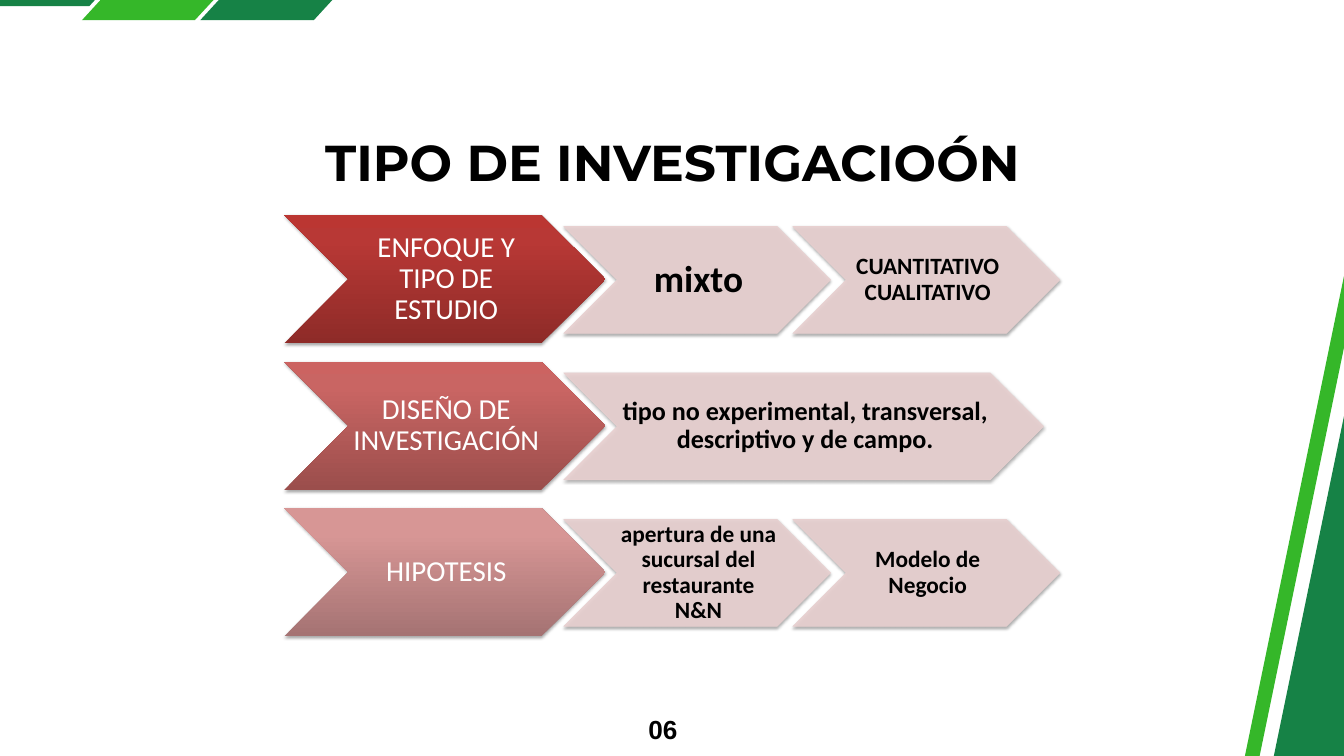
from lxml import etree
from pptx import Presentation
from pptx import util as u
from pptx.dml.color import RGBColor
from pptx.enum import shapes, text
from pptx.oxml import parse_xml
from pptx.oxml.ns import nsdecls, qn

DARK_GREEN = RGBColor(0x16, 0x82, 0x46)
LIGHT_GREEN = RGBColor(0x35, 0xB7, 0x29)
PALE_PINK = RGBColor(0xE8, 0xD0, 0xD0)
BLACK = RGBColor(0, 0, 0)
WHITE = RGBColor(0xFF, 0xFF, 0xFF)

deck = Presentation()
deck.slide_width, deck.slide_height = u.Inches(20), u.Inches(11.25)
slide = deck.slides.add_slide(deck.slide_layouts[6])


def write(shape, wording, size, font, color, bold, align, inset=(0, 0, 0, 0)):
    """Put one formatted paragraph in a shape; inset is left, top, right, bottom."""
    frame = shape.text_frame
    frame.word_wrap = True
    (frame.margin_left, frame.margin_top,
     frame.margin_right, frame.margin_bottom) = map(u.Inches, inset)
    frame.text = wording
    paragraph = frame.paragraphs[0]
    paragraph.alignment = align
    run = paragraph.runs[0].font
    run.size, run.name, run.bold = u.Pt(size), font, bold
    run.color.rgb = color
    return paragraph


def add_chevron(left, top, width, height):
    """Add a chevron with a soft shadow below it."""
    chevron = slide.shapes.add_shape(
        shapes.MSO_SHAPE.CHEVRON, *map(u.Inches, (left, top, width, height)))
    chevron.line.fill.background()
    chevron.shadow.inherit = False
    chevron.text_frame.vertical_anchor = text.MSO_ANCHOR.MIDDLE
    effects = chevron._element.spPr.find(qn("a:effectLst"))
    effects.append(parse_xml(
        f'<a:outerShdw {nsdecls("a")} blurRad="40000" dist="23000" dir="5400000" '
        'rotWithShape="0"><a:srgbClr val="000000"><a:alpha val="35000"/>'
        '</a:srgbClr></a:outerShdw>'))
    return chevron


# Green bands in the top left corner and along the right edge
bands = [
    (DARK_GREEN, [(-1.79, -0.83), (2.17, -0.83), (1.33, 0.09), (-2.63, 0.09)]),
    (LIGHT_GREEN, [(2.44, -1.03), (4.13, -1.03), (2.9, 0.3), (1.22, 0.3)]),
    (DARK_GREEN, [(4.2, -1.03), (5.89, -1.03), (4.67, 0.3), (2.98, 0.3)]),
    (DARK_GREEN, [(18.13, 15.25), (21.45, -0.83), (26.01, 0.12), (22.69, 16.19)]),
    (LIGHT_GREEN, [(17.7, 15.25), (21.02, -0.83), (21.23, -0.78), (17.91, 15.29)]),
]
for color, corners in bands:
    points = [(u.Inches(x), u.Inches(y)) for x, y in corners]
    outline = slide.shapes.build_freeform(*points[0])
    outline.add_line_segments(points[1:], close=True)
    band = outline.convert_to_shape()
    band.fill.solid()
    band.fill.fore_color.rgb = color
    band.line.fill.background()
    band.shadow.inherit = False

title = slide.shapes.add_textbox(*map(u.Inches, (2.42, 1.95, 15.17, 0.91)))
write(title, "TIPO DE INVESTIGACIOÓN", 54, "Montserrat", BLACK, True, text.PP_ALIGN.CENTER)

page_number = slide.shapes.add_textbox(*map(u.Inches, (9.52, 10.54, 0.56, 0.5)))
number = write(page_number, "06", 28, "Arial", BLACK, True, text.PP_ALIGN.RIGHT)
number.line_spacing = u.Pt(39.2)

# Chevron grid: a topic per row, followed by its answers
TOPIC_LEFT, FIRST_TOP, ROW_STEP = 4.23, 3.2, 2.18
TOPIC_W, TOPIC_H = 4.78, 1.91
ANSWER_LEFT, ANSWER_STEP = 8.39, 3.41
ANSWER_W, WIDE_W, ANSWER_H = 3.97, 7.14, 1.59

# topic, gradient from bottom to top, answers as (wording, width, size)
rows = [
    ("ENFOQUE Y TIPO DE ESTUDIO", ("8E2B28", "B83835", "BB3632"),
     [("mixto", ANSWER_W, 40), ("CUANTITATIVO CUALITATIVO", ANSWER_W, 25)]),
    ("DISEÑO DE INVESTIGACIÓN", ("9B4E4C", "C96563", "CC6361"),
     [("tipo no experimental, transversal, descriptivo y de campo.", WIDE_W, 28)]),
    ("HIPOTESIS", ("A57373", "D79695", "D99594"),
     [("apertura de una sucursal del restaurante N&N", ANSWER_W, 25),
      ("Modelo de Negocio", ANSWER_W, 25)]),
]
for row, (topic, shades, answers) in enumerate(rows):
    top = FIRST_TOP + row * ROW_STEP
    chevron = add_chevron(TOPIC_LEFT, top, TOPIC_W, TOPIC_H)
    chevron.fill.gradient()
    chevron.fill.gradient_angle = 90
    stops = chevron._element.spPr.find(qn("a:gradFill")).find(qn("a:gsLst"))
    for stop in list(stops):
        stops.remove(stop)
    for position, shade in zip((0, 80, 100), shades):
        stop = etree.SubElement(stops, qn("a:gs"), pos=str(position * 1000))
        etree.SubElement(stop, qn("a:srgbClr"), val=shade)
    write(chevron, topic, 31, "Calibri", WHITE, False, text.PP_ALIGN.CENTER,
          (0.04, 0.02, 0, 0.02)).line_spacing = 0.9

    for column, (answer, width, size) in enumerate(answers):
        chevron = add_chevron(ANSWER_LEFT + column * ANSWER_STEP,
                              top + 0.17, width, ANSWER_H)
        chevron.line.width = u.Pt(0.75)
        for paint in (chevron.fill, chevron.line.fill):
            paint.solid()
            paint.fore_color.rgb = PALE_PINK
        for tint in chevron._element.spPr.iter(qn("a:srgbClr")):
            if tint.get("val") == str(PALE_PINK):
                etree.SubElement(tint, qn("a:alpha"), val="90000")
        write(chevron, answer, size, "Calibri", BLACK, True, text.PP_ALIGN.CENTER,
              (0.04, 0.02, 0, 0.02)).line_spacing = 0.9

deck.save("out.pptx")
